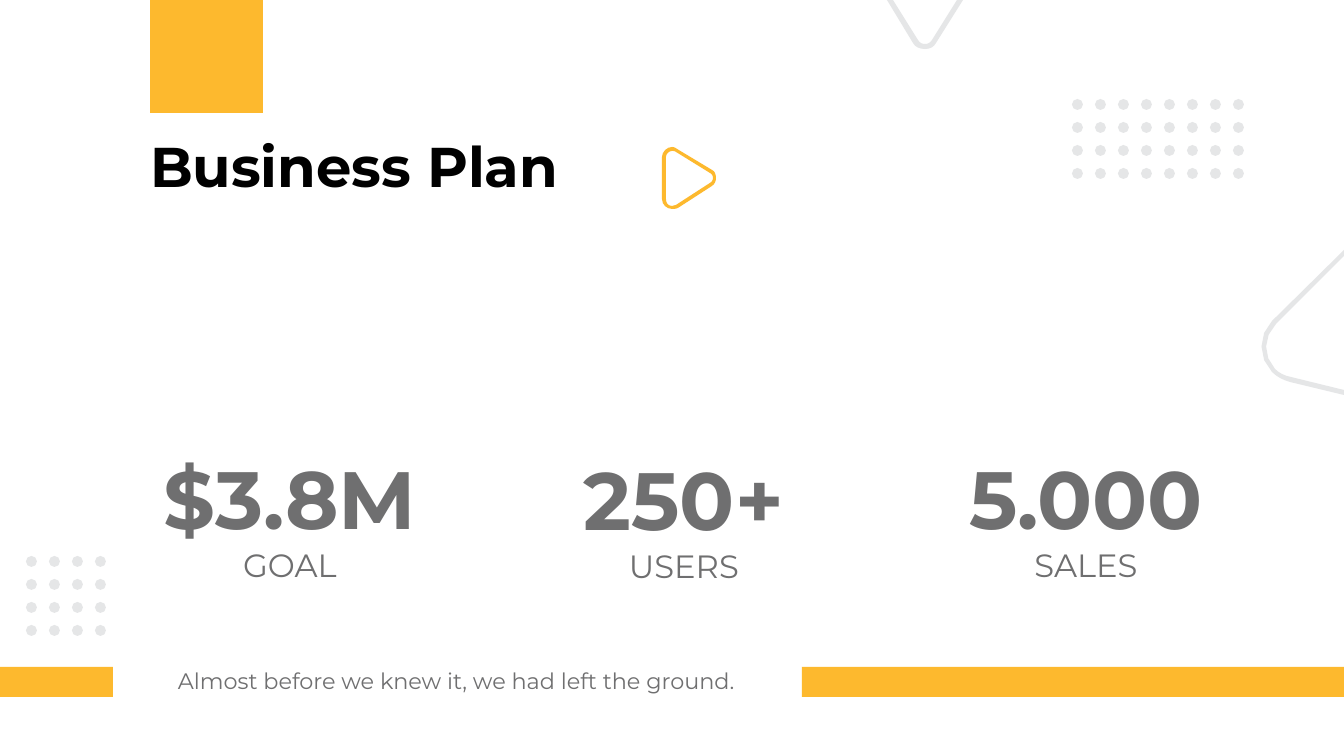
from math import cos, pi, sin

from pptx import Presentation
from pptx.dml.color import RGBColor
from pptx.enum.shapes import MSO_SHAPE
from pptx.enum.text import MSO_ANCHOR, PP_ALIGN
from pptx.util import Pt

PX = 12192000 / 1344  # EMU per px
COLORS = {"yellow": "FDB92E", "light": "E5E6E7", "gray": "6F6F70", "black": "000000"}
FONT = "Montserrat"
CURVE_STEPS = 4


def add_outline(contours, color):
    """Fill closed contours; a six-number step is a cubic curve, a pair is a corner."""
    builder = None
    for steps in contours:
        points = [steps[0]]
        for step in steps[1:]:
            if len(step) == 2:
                points.append(step)
                continue
            curve = [points[-1], step[:2], step[2:4], step[4:]]
            for i in range(1, CURVE_STEPS + 1):
                t = i / CURVE_STEPS
                weights = ((1 - t) ** 3, 3 * t * (1 - t) ** 2, 3 * t * t * (1 - t), t ** 3)
                points.append(tuple(sum(w * c[k] for w, c in zip(weights, curve))
                                    for k in (0, 1)))
        points = [(round(x * PX), round(y * PX)) for x, y in points]
        if builder is None:
            builder = slide.shapes.build_freeform(*points[0])
        else:
            builder.move_to(*points[0])
        builder.add_line_segments(points[1:], close=True)
    paint(builder.convert_to_shape(), color)


def paint(sp, color):
    sp.fill.solid()
    sp.fill.fore_color.rgb = RGBColor.from_string(COLORS[color])
    sp.line.fill.background()
    sp.shadow.inherit = False


prs = Presentation()
prs.slide_width, prs.slide_height = round(1344 * PX), round(756 * PX)
slide = prs.slides.add_slide(prs.slide_layouts[5])

# Yellow blocks
for box in ((150, 0, 113, 113), (0, 667, 113, 30), (802, 667, 542, 30)):
    paint(slide.shapes.add_shape(MSO_SHAPE.RECTANGLE, *(round(v * PX) for v in box)), "yellow")

# Texts: shape, box, wrap, alignment, lines of (text, size, bold, color)
texts = [
    (slide.shapes.title, (150, 139, 1008, 94), True, PP_ALIGN.LEFT,
     [("Business Plan", 40, True, "black")]),
    (None, (178, 667, 567, 27), False, PP_ALIGN.LEFT,
     [("Almost before we knew it, we had left the ground.", 16, False, "gray")]),
]
stats = [(153, 448, "$3.8M", "GOAL"), (547, 449, "250+", "USERS"), (949, 448, "5.000", "SALES")]
for x, y, value, label in stats:
    texts.append((None, (x, y, 274, 137), True, PP_ALIGN.CENTER,
                  [(value, 58, True, "gray"), (label, 23, False, "gray")]))

for sp, box, wrap, align, lines in texts:
    sp = sp or slide.shapes.add_textbox(0, 0, 0, 0)
    for name, v in zip(("left", "top", "width", "height"), box):
        setattr(sp, name, round(v * PX))
    tf = sp.text_frame
    frame_format = {"margin_left": 0, "margin_top": 0, "margin_right": 0, "margin_bottom": 0,
                    "word_wrap": wrap, "vertical_anchor": MSO_ANCHOR.TOP}
    for name, v in frame_format.items():
        setattr(tf, name, v)
    for i, (text, size, bold, color) in enumerate(lines):
        p = tf.add_paragraph() if i else tf.paragraphs[0]
        p.alignment = align
        r = p.add_run()
        r.text = text
        for name, v in {"name": FONT, "size": Pt(size), "bold": bold}.items():
            setattr(r.font, name, v)
        r.font.color.rgb = RGBColor.from_string(COLORS[color])
slide.shapes.title.text_frame.paragraphs[0].line_spacing = 0.9

# Dot grids
PITCH, DIAMETER, SIDES = 23, 11, 8
RADIUS = DIAMETER / 2
for left, top, columns, rows in ((1072, 99, 8, 4), (26, 556, 4, 4)):
    dots = []
    for row in range(rows):
        for column in range(columns):
            cx, cy = left + RADIUS + column * PITCH, top + RADIUS + row * PITCH
            dots.append([(cx + RADIUS * cos(2 * pi * i / SIDES),
                          cy + RADIUS * sin(2 * pi * i / SIDES)) for i in range(SIDES)])
    add_outline(dots, "light")

# Rounded triangles
top_triangle = [
    (887, 0), (913, 43), (915, 47, 920, 49, 925, 49), (930, 49, 934, 47, 936, 43), (963, 0),
    (957, 0), (932, 40), (930, 43, 928, 44, 925, 44), (922, 44, 920, 43, 918, 40), (893, 0)]
right_triangle = [
    (1344, 395), (1290, 382), (1283, 380, 1277, 377, 1272, 372),
    (1258, 358, 1258, 335, 1272, 321), (1344, 250), (1344, 256), (1276, 324),
    (1263, 337, 1263, 356, 1275, 369), (1279, 373, 1285, 376, 1291, 377), (1344, 390)]
play_outer = [
    (677, 149), (712, 170), (715, 171, 716, 175, 716, 178), (716, 181, 715, 184, 712, 186),
    (678, 208), (676, 209, 674, 209, 672, 209), (667, 209, 662, 205, 662, 199), (662, 157),
    (662, 152, 667, 147, 672, 147), (674, 147, 676, 148, 677, 149)]
play_inner = [
    (676, 152), (675, 151, 673, 151, 672, 151), (669, 151, 666, 154, 666, 157), (666, 199),
    (666, 203, 668, 206, 672, 206), (673, 206, 675, 205, 676, 205), (710, 183),
    (712, 182, 713, 180, 713, 178), (713, 176, 712, 174, 710, 173)]
add_outline([top_triangle], "light")
add_outline([right_triangle], "light")
add_outline([play_outer, play_inner], "yellow")

prs.save("out.pptx")
